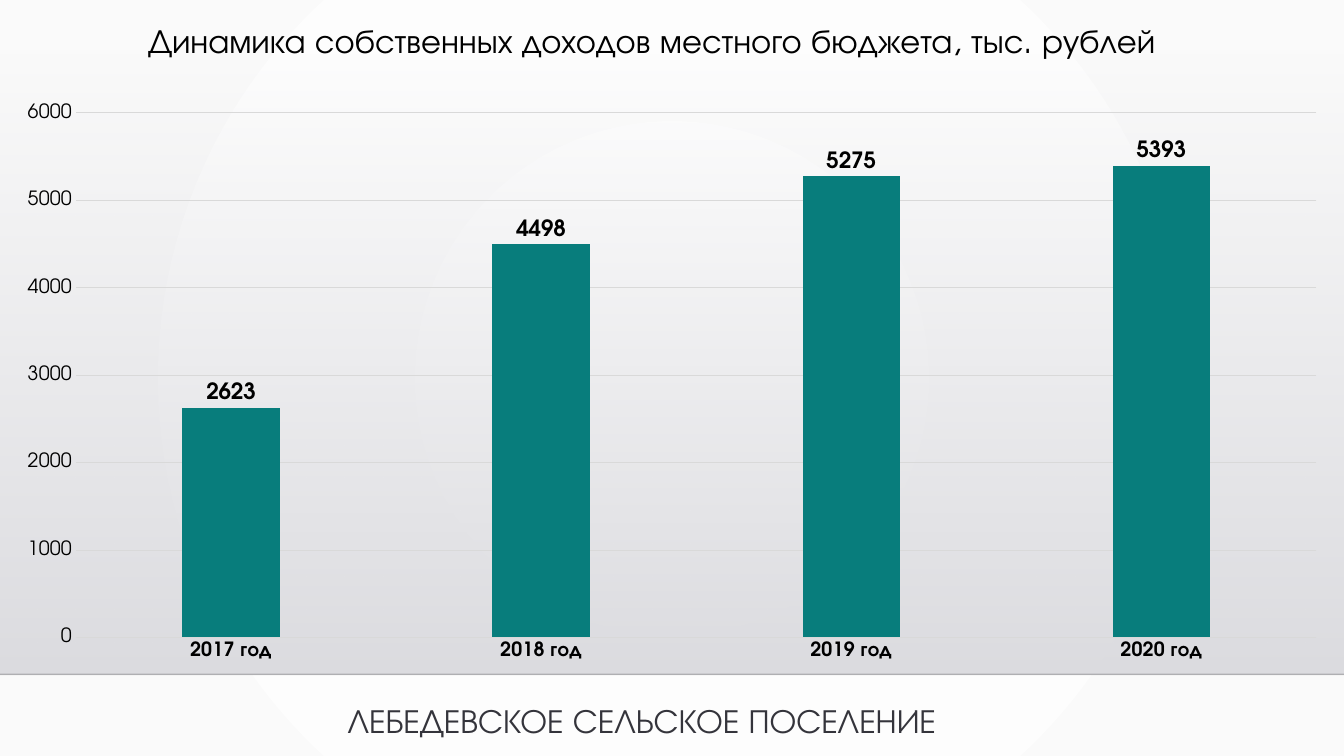
from pptx import Presentation
from pptx.chart.data import CategoryChartData
from pptx.dml.color import RGBColor
from pptx.enum.chart import XL_CHART_TYPE, XL_LABEL_POSITION, XL_TICK_MARK
from pptx.enum.shapes import MSO_CONNECTOR, MSO_SHAPE
from pptx.enum.text import MSO_ANCHOR, MSO_AUTO_SIZE, PP_ALIGN
from pptx.oxml import parse_xml
from pptx.oxml.ns import nsdecls, qn
from pptx.util import Inches, Pt

# Content
TITLE = "Динамика собственных доходов местного бюджета, тыс. рублей"
FOOTER = "ЛЕБЕДЕВСКОЕ СЕЛЬСКОЕ ПОСЕЛЕНИЕ"
INCOME = {"2017 год": 2623, "2018 год": 4498, "2019 год": 5275, "2020 год": 5393}

# Style
FONT = "TeX Gyre Adventor"
BLACK = RGBColor(0x00, 0x00, 0x00)
DARK = RGBColor(0x34, 0x34, 0x3B)
TEAL = RGBColor(0x08, 0x7D, 0x7C)
GRID = RGBColor(0xD9, 0xD9, 0xD9)
WHITE = RGBColor(0xFF, 0xFF, 0xFF)
PALE = RGBColor(0xFA, 0xFA, 0xFA)
MIST = RGBColor(0xDC, 0xDC, 0xE0)
HAZE = RGBColor(0xDE, 0xDE, 0xE2)

# Places in inches
WIDE, HIGH = 13.33, 7.5
BAND_TOP, BAND_END = 0.51, 6.69
PLOT = {"x": 0.0565, "y": 0.035, "w": 0.923, "h": 0.905}  # shares of the chart


def box(*sides):
    return [Inches(side) for side in sides]


def style(font, size, color=BLACK, bold=False):
    font.name, font.size, font.bold = FONT, Pt(size), bold
    font.color.rgb = color


def write(frame, text, color):
    frame.text = text
    style(frame.paragraphs[0].runs[0].font, 24, color)


def blend(fill, *colors):
    fill.gradient()
    for stop, color, place in zip(fill.gradient_stops, colors, (0, 1)):
        stop.color.rgb, stop.position = color, place


def fade(color, share):
    color.append(parse_xml(f'<a:alpha {nsdecls("a")} val="{share * 1000}"/>'))


deck = Presentation()
deck.slide_width, deck.slide_height = box(WIDE, HIGH)
slide = deck.slides.add_slide(deck.slide_layouts[5])
shapes = slide.shapes

# Radial background
blend(slide.background.fill, WHITE, PALE)
line = next(slide.element.iter(qn("a:lin")))
line.getparent().replace(line, parse_xml(
    f'<a:path {nsdecls("a")} path="circle">'
    '<a:fillToRect l="50000" t="50000" r="50000" b="50000"/></a:path>'))

# Grey band fading in downwards
band = shapes.add_shape(MSO_SHAPE.RECTANGLE, *box(0, BAND_TOP, WIDE, BAND_END - BAND_TOP))
band.shadow.inherit = False
band.line.fill.background()
blend(band.fill, MIST, HAZE)
band.fill.gradient_angle = 270
fade(next(band.element.spPr.iter(qn("a:srgbClr"))), 0)

# Rule under the band
rule = shapes.add_connector(MSO_CONNECTOR.STRAIGHT, *box(0, BAND_END, WIDE, BAND_END))
rule.line.width = Pt(1)
rule.line.color.rgb = BLACK
props = rule.element.spPr
fade(next(props.iter(qn("a:srgbClr"))), 20)
props.append(parse_xml(f'<a:effectLst {nsdecls("a")}/>'))

# Title
title = shapes.title
title.left, title.top, title.width, title.height = box(0.73, 0.19, 11.47, 0.96)
frame = title.text_frame
write(frame, TITLE, BLACK)
frame.vertical_anchor = MSO_ANCHOR.TOP
frame.paragraphs[0].alignment = PP_ALIGN.CENTER
frame.paragraphs[0].line_spacing = 0.9

# Footer
frame = shapes.add_textbox(*box(3.35, 6.89, 6.64, 0.5)).text_frame
write(frame, FOOTER, DARK)
frame.word_wrap = False
frame.auto_size = MSO_AUTO_SIZE.SHAPE_TO_FIT_TEXT

# Column chart
data = CategoryChartData()
data.categories = list(INCOME)
data.add_series("Доходы", list(INCOME.values()))
chart = shapes.add_chart(
    XL_CHART_TYPE.COLUMN_CLUSTERED, *box(0, 0.92, WIDE, 5.75), data).chart
chart.has_legend = chart.has_title = False
style(chart.font, 14)

plot = chart.plots[0]
plot.gap_width, plot.overlap = 219, -27
plot.vary_by_categories = False
fill = plot.series[0].format.fill
fill.solid()
fill.fore_color.rgb = TEAL
plot.has_data_labels = True
labels = plot.data_labels
labels.show_value = True
labels.position = XL_LABEL_POSITION.OUTSIDE_END
style(labels.font, 16, bold=True)

# Axes and grid
years, scale = chart.category_axis, chart.value_axis
for axis in (years, scale):
    axis.major_tick_mark = axis.minor_tick_mark = XL_TICK_MARK.NONE
    style(axis.tick_labels.font, 14, bold=axis is years)
scale.minimum_scale, scale.maximum_scale, scale.major_unit = 0, 6000, 1000
scale.format.line.fill.background()
for part in (years, scale.major_gridlines):
    part.format.line.width = Pt(0.75)
    part.format.line.color.rgb = GRID

# Inner plot area
area = chart.element.chart.plotArea
for old in area.findall(qn("c:layout")):
    area.remove(old)
sizes = "".join(f'<c:{key} val="{share}"/>' for key, share in PLOT.items())
area.insert(0, parse_xml(
    f'<c:layout {nsdecls("c")}><c:manualLayout><c:layoutTarget val="inner"/>'
    f'<c:xMode val="edge"/><c:yMode val="edge"/>{sizes}</c:manualLayout></c:layout>'))

deck.save("out.pptx")
